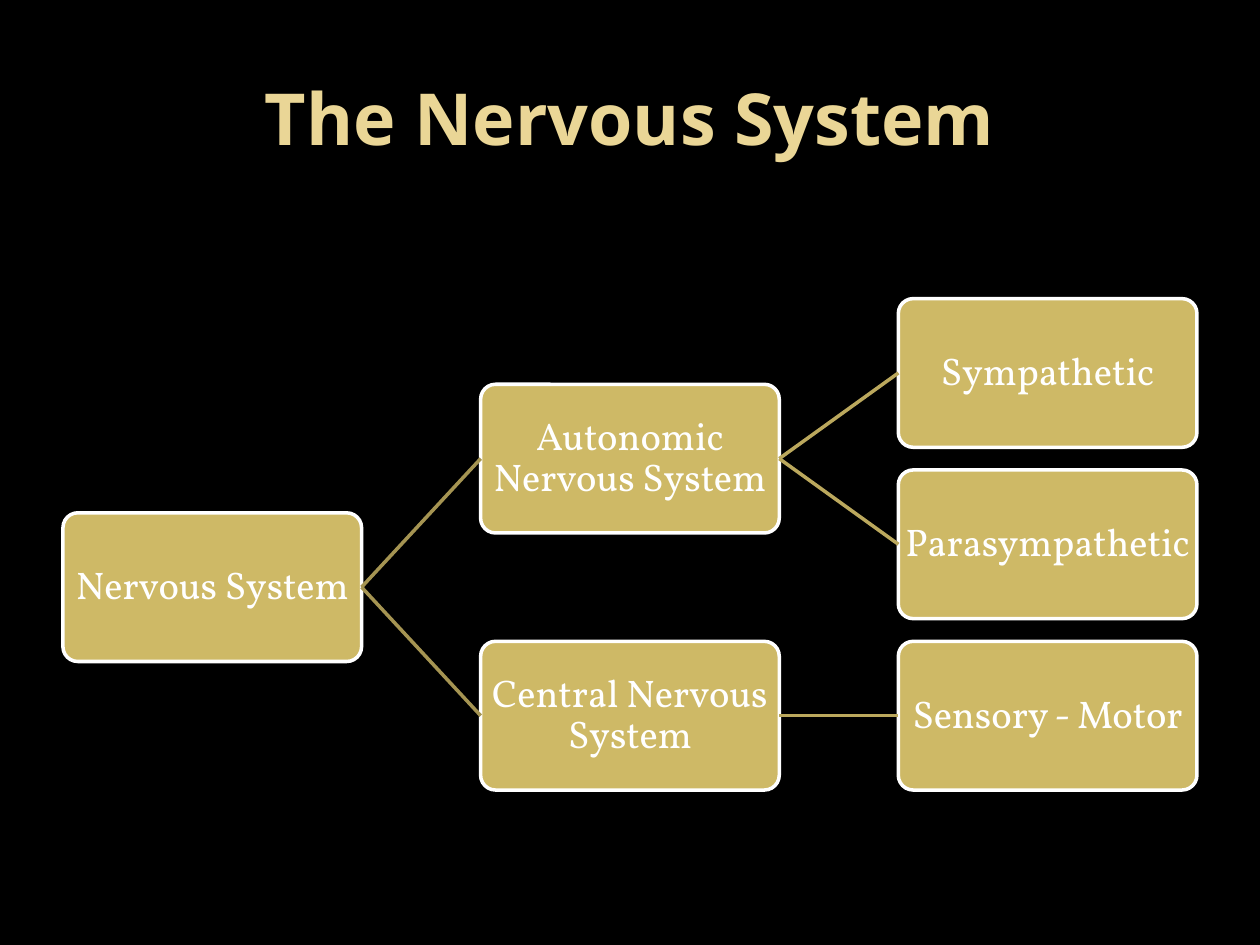
import pptx
import pptx.dml.color
import pptx.enum.shapes
import pptx.enum.text
import pptx.oxml
import pptx.util
from dataclasses import dataclass

Inches = pptx.util.Inches
Pt = pptx.util.Pt
rgb = pptx.dml.color.RGBColor.from_string


@dataclass(frozen=True)
class Theme:
    background: str = "000000"
    title: str = "EAD696"
    box: str = "CEB966"
    white: str = "FFFFFF"
    branch_lines: tuple = ("A59452", "BBA85D")  # by level of the parent
    title_font: str = "Noto Sans"
    box_font: str = "Vollkorn"
    title_size: int = 41
    box_size: int = 22
    line_width: int = 2


theme = Theme()


def write_text(shape, text, margin, font_format):
    """Put one centred, formatted line of text into a shape."""
    frame = shape.text_frame
    frame_format = {
        "word_wrap": True,
        "vertical_anchor": pptx.enum.text.MSO_ANCHOR.MIDDLE,
        "margin_left": margin,
        "margin_right": margin,
        "margin_top": margin,
        "margin_bottom": margin,
    }
    for name, value in frame_format.items():
        setattr(frame, name, value)
    paragraph = frame.paragraphs[0]
    paragraph.alignment = pptx.enum.text.PP_ALIGN.CENTER
    run = paragraph.add_run()
    run.text = text
    for name, value in font_format["font"].items():
        setattr(run.font, name, value)
    run.font.color.rgb = rgb(font_format["color"])
    return paragraph


title_format = {
    "font": {"name": theme.title_font, "size": Pt(theme.title_size), "bold": True},
    "color": theme.title,
}
box_format = {
    "font": {"name": theme.box_font, "size": Pt(theme.box_size), "bold": False},
    "color": theme.white,
}

presentation = pptx.Presentation()
presentation.slide_width = Inches(10)
presentation.slide_height = Inches(7.5)
slide = presentation.slides.add_slide(presentation.slide_layouts[5])
slide.background.fill.solid()
slide.background.fill.fore_color.rgb = rgb(theme.background)

title = slide.shapes.title
title_place = {"left": 0.5, "top": 0.3, "width": 9, "height": 1.25}
for name, value in title_place.items():
    setattr(title, name, Inches(value))
write_text(title, "The Nervous System", Inches(0.05), title_format)

# Three columns fill the width between the margins; rows are counted in leaf boxes.
margin, first_top = 0.5, 2.37
box_width, box_height = 2.37, 1.18
column_pitch = (10 - 2 * margin - box_width) / 2
row_pitch = 1.36

# Label, level, row, parent label
tree = [
    ("Nervous System", 0, 1.25, None),
    ("Autonomic Nervous System", 1, 0.5, "Nervous System"),
    ("Sympathetic", 2, 0, "Autonomic Nervous System"),
    ("Parasympathetic", 2, 1, "Autonomic Nervous System"),
    ("Central Nervous System", 1, 2, "Nervous System"),
    ("Sensory - Motor", 2, 2, "Central Nervous System"),
]
left_site, right_site = 1, 3

boxes = {}
for label, level, row, parent in tree:
    box = slide.shapes.add_shape(
        pptx.enum.shapes.MSO_SHAPE.ROUNDED_RECTANGLE,
        Inches(margin + level * column_pitch),
        Inches(first_top + row * row_pitch),
        Inches(box_width),
        Inches(box_height),
    )
    box.adjustments[0] = 0.1
    box.shadow.inherit = False
    box.fill.solid()
    box.fill.fore_color.rgb = rgb(theme.box)
    box.line.color.rgb = rgb(theme.white)
    box.line.width = Pt(theme.line_width)
    write_text(box, label, Inches(0.02), box_format).line_spacing = 0.9
    boxes[label] = box

    if parent:
        branch = slide.shapes.add_connector(
            pptx.enum.shapes.MSO_CONNECTOR.STRAIGHT, 0, 0, 0, 0
        )
        branch.begin_connect(boxes[parent], right_site)
        branch.end_connect(box, left_site)
        branch.line.color.rgb = rgb(theme.branch_lines[level - 1])
        branch.line.width = Pt(theme.line_width)
        branch._element.spPr.append(pptx.oxml.parse_xml(
            '<a:effectLst xmlns:a="http://schemas.openxmlformats.org/drawingml/2006/main"/>'
        ))

presentation.save("out.pptx")
